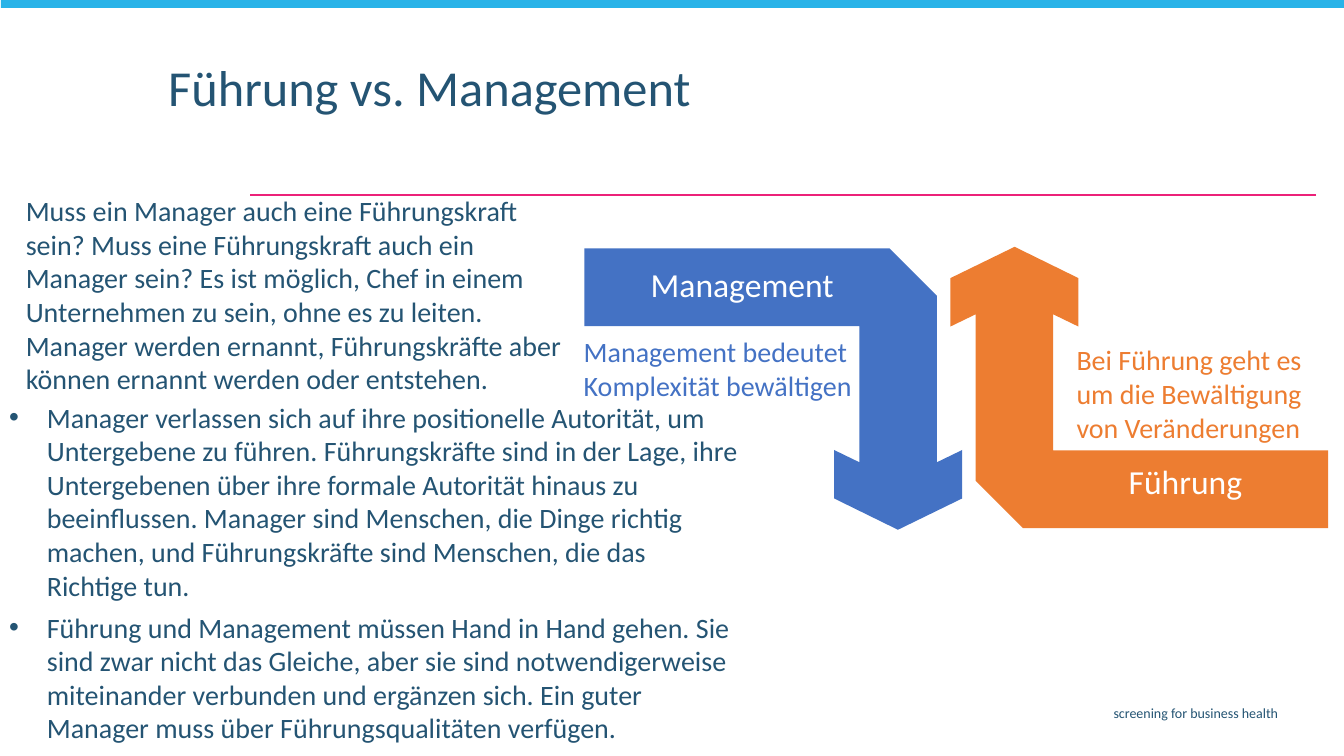
from pptx import Presentation
from pptx.dml.color import RGBColor
from pptx.enum.shapes import MSO_CONNECTOR, MSO_SHAPE
from pptx.enum.text import MSO_ANCHOR, MSO_AUTO_SIZE, PP_ALIGN
from pptx.oxml.ns import qn
from pptx.util import Cm, Pt
from lxml.etree import SubElement

NAVY = RGBColor(0x24, 0x54, 0x73)
PINK = RGBColor(0xEC, 0x21, 0x79)
SKY = RGBColor(0x29, 0xB3, 0xE8)
BLUE = RGBColor(0x44, 0x72, 0xC4)
ORANGE = RGBColor(0xED, 0x7D, 0x31)
WHITE = RGBColor(0xFF, 0xFF, 0xFF)


def place(sp, box, inset):
    sp.left, sp.top, sp.width, sp.height = [Cm(v) for v in box]
    tf = sp.text_frame
    tf.word_wrap = True
    tf.auto_size = MSO_AUTO_SIZE.NONE
    tf.vertical_anchor = MSO_ANCHOR.TOP
    tf.margin_left = tf.margin_right = Cm(inset)
    tf.margin_top = tf.margin_bottom = Cm(inset)
    return tf


def write(p, text, size, color, align=PP_ALIGN.LEFT):
    p.alignment = align
    p.space_before = Pt(0)
    for i, line in enumerate(text.split("\n")):
        if i:
            p.add_line_break()
        r = p.add_run()
        r.text = line
        r.font.name = "Calibri"
        r.font.size = Pt(size)
        r.font.color.rgb = color


prs = Presentation()
prs.slide_width, prs.slide_height = Cm(33.87), Cm(19.05)
slide = prs.slides.add_slide(prs.slide_layouts[1])
shapes = slide.shapes

# Top band and title rule
band = shapes.add_shape(MSO_SHAPE.RECTANGLE, Cm(0.02), Cm(-0.05), Cm(33.88), Cm(0.25))
band.shadow.inherit = False
band.fill.solid()
band.fill.fore_color.rgb = SKY
band.line.fill.background()

rule = shapes.add_connector(MSO_CONNECTOR.STRAIGHT, Cm(33.17), Cm(4.91), Cm(6.3), Cm(4.91))
rule.line.color.rgb = PINK
rule.line.width = Pt(1.5)
SubElement(rule._element.spPr, qn("a:effectLst"))

# Title
p = place(shapes.title, (4.11, 1.45, 24.59, 1.93), 0.13).paragraphs[0]
write(p, "Führung vs. Management", 36, NAVY)
p.line_spacing = 0.9

# Bullet list
bullets = [
    "Manager verlassen sich auf ihre positionelle Autorität, um Untergebene zu führen. "
    "Führungskräfte sind in der Lage, ihre Untergebenen über ihre formale Autorität hinaus "
    "zu beeinflussen. Manager sind Menschen, die Dinge richtig machen, und Führungskräfte "
    "sind Menschen, die das Richtige tun.",
    "Führung und Management müssen Hand in Hand gehen. Sie sind zwar nicht das Gleiche, "
    "aber sie sind notwendigerweise miteinander verbunden und ergänzen sich. Ein guter "
    "Manager muss über Führungsqualitäten verfügen.",
]
tf = place(slide.placeholders[1], (0.13, 9.98, 18.59, 9.17), 0.1)
for i, text in enumerate(bullets):
    p = tf.add_paragraph() if i else tf.paragraphs[0]
    pPr = p._p.get_or_add_pPr()
    pPr.set("marL", str(Cm(0.95)))
    pPr.set("indent", str(Cm(-0.95)))
    SubElement(pPr, qn("a:buFont")).set("typeface", "Arial")
    SubElement(pPr, qn("a:buChar")).set("char", "•")
    write(p, text, 20, NAVY)
    if i:
        p.space_before = Pt(6)

# Bent arrows: the blue one is the orange one turned by half a circle
up_arrow = [
    (24.59, 12.12), (24.59, 7.92), (23.95, 8.23), (23.95, 7.01),
    (25.57, 6.22), (27.18, 7.01), (27.18, 8.23), (26.54, 7.92),
    (26.54, 11.35), (33.47, 11.35), (33.47, 13.31), (25.78, 13.31),
]
down_arrow = [(48.2 - x, 19.57 - y) for x, y in up_arrow]
for outline, color in ((up_arrow, ORANGE), (down_arrow, BLUE)):
    points = [(Cm(x), Cm(y)) for x, y in outline]
    fb = shapes.build_freeform(*points[0])
    fb.add_line_segments(points[1:], close=True)
    sp = fb.convert_to_shape()
    sp.shadow.inherit = False
    sp.fill.solid()
    sp.fill.fore_color.rgb = color
    sp.line.fill.background()

# Intro, arrow labels, captions and footer
intro = (
    "Muss ein Manager auch eine Führungskraft sein? Muss eine Führungskraft auch ein "
    "Manager sein? Es ist möglich, Chef in einem Unternehmen zu sein, ohne es zu leiten. "
    "Manager werden ernannt, Führungskräfte aber können ernannt werden oder entstehen."
)
LEFT, CENTER, RIGHT = PP_ALIGN.LEFT, PP_ALIGN.CENTER, PP_ALIGN.RIGHT
texts = [
    (intro, (0.55, 4.78, 14.07, 5.36), 0.1, 20, NAVY, LEFT),
    ("Management", (15.49, 6.65, 6.43, 1.02), 0, 24, WHITE, CENTER),
    ("Führung", (26.52, 11.61, 6.71, 0.84), 0, 24, WHITE, CENTER),
    ("Bei Führung geht es um die Bewältigung von Veränderungen",
     (27, 8.51, 6.4, 2.64), 0.13, 20, ORANGE, LEFT),
    ("Management bedeutet\nKomplexität bewältigen",
     (14.58, 8.31, 7.06, 1.8), 0.13, 20, BLUE, LEFT),
    ("screening for business health", (9.4, 17.63, 22.94, 0.64), 0.13, 10, NAVY, RIGHT),
]
for text, box, inset, size, color, align in texts:
    sp = shapes.add_textbox(0, 0, 0, 0)
    write(place(sp, box, inset).paragraphs[0], text, size, color, align)

prs.save("out.pptx")
